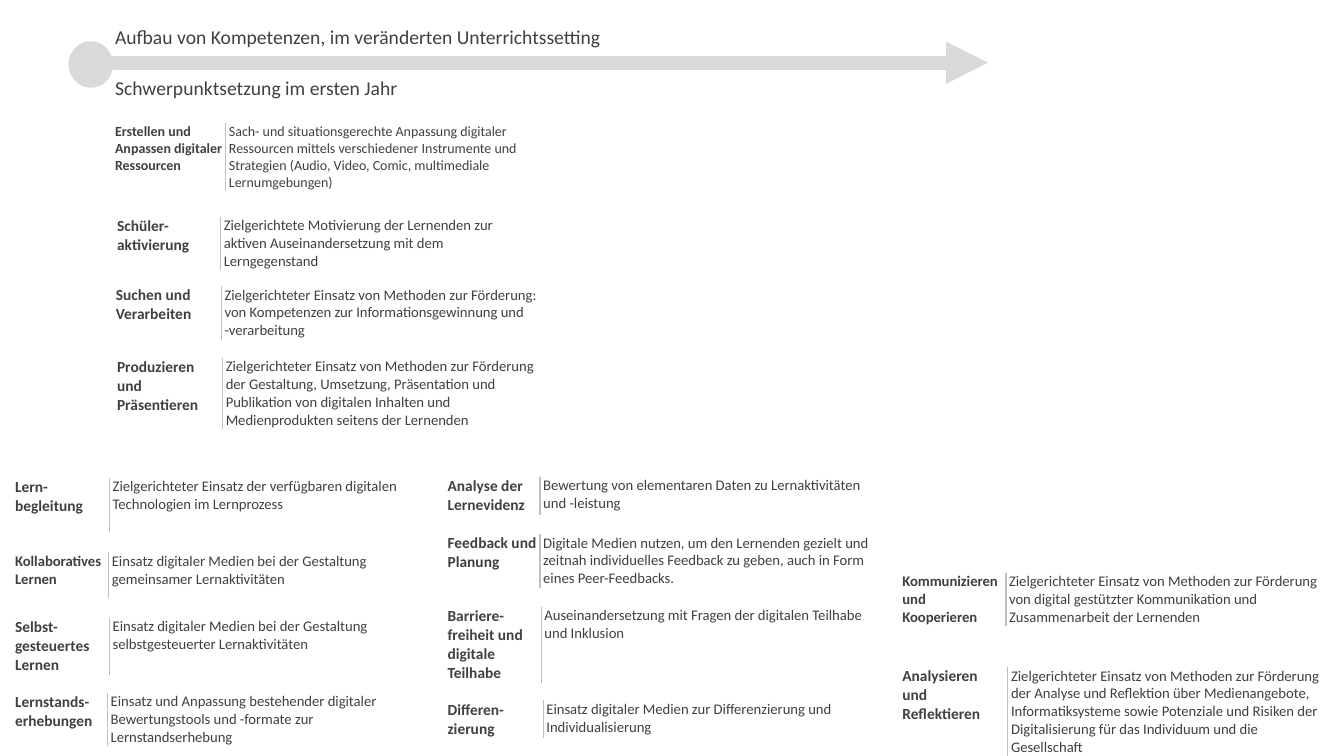
from lxml import etree
from pptx import Presentation
from pptx.dml.color import RGBColor
from pptx.enum.shapes import MSO_CONNECTOR, MSO_SHAPE
from pptx.enum.text import MSO_ANCHOR, PP_ALIGN
from pptx.oxml.ns import qn
from pptx.util import Cm, Pt

STRAIGHT = MSO_CONNECTOR.STRAIGHT
OVAL = MSO_SHAPE.OVAL
MIDDLE = MSO_ANCHOR.MIDDLE
LEFT = PP_ALIGN.LEFT

TITLE_ONLY = 5
FONT = "Calibri"
COLORS = {"text": "404040", "arrow": "D9D9D9", "rule": "BFBFBF"}
NO_TABLE_STYLE = "{2D5ABB26-0587-4C30-8999-92F81FD0307C}"
HEADING_FORMAT = {"word_wrap": True, "vertical_anchor": MIDDLE,
                  "margin_left": Cm(0.08), "margin_right": Cm(0.08),
                  "margin_top": Cm(0.08), "margin_bottom": Cm(0.08)}
CELL_FORMAT = {"margin_left": Cm(0.08), "margin_right": Cm(0.08),
               "margin_top": 0, "margin_bottom": 0}

# left, top, label width, description width, height (cm), label size, description size (pt)
COMPETENCES = [
    (2.82, 3.1, 2.87, 8.25, 1.7, 10, 10, "Erstellen und Anpassen digitaler Ressourcen",
     "Sach- und situationsgerechte Anpassung digitaler Ressourcen mittels verschiedener "
     "Instrumente und Strategien (Audio, Video, Comic, multimediale Lernumgebungen)"),
    (2.87, 5.46, 2.69, 8.05, 1.35, 11, 10.5, "Schüler-aktivierung",
     "Zielgerichtete Motivierung der Lernenden zur aktiven Auseinandersetzung mit dem "
     "Lerngegenstand"),
    (2.84, 7.21, 2.74, 8.41, 1.35, 11, 10.5, "Suchen und Verarbeiten",
     "Zielgerichteter Einsatz von Methoden zur Förderung: von Kompetenzen zur "
     "Informationsgewinnung und -verarbeitung"),
    (2.87, 9.02, 2.74, 8.43, 1.78, 11, 10.5, "Produzieren und Präsentieren",
     "Zielgerichteter Einsatz von Methoden zur Förderung der Gestaltung, Umsetzung, "
     "Präsentation und Publikation von digitalen Inhalten und Medienprodukten seitens "
     "der Lernenden"),
    (0.3, 12.04, 2.46, 8.2, 1.37, 11, 10.5, "Lern-begleitung",
     "Zielgerichteter Einsatz der verfügbaren digitalen Technologien im Lernprozess"),
    (0.3, 13.92, 2.44, 8.2, 1.14, 10.5, 10.5, "Kollaboratives Lernen",
     "Einsatz digitaler Medien bei der Gestaltung gemeinsamer Lernaktivitäten"),
    (0.3, 15.57, 2.46, 8.2, 1.4, 11, 10.5, "Selbst-gesteuertes Lernen",
     "Einsatz digitaler Medien bei der Gestaltung selbstgesteuerter Lernaktivitäten"),
    (0.3, 17.45, 2.41, 8.38, 1.35, 11, 10.5, "Lernstands-erhebungen",
     "Einsatz und Anpassung bestehender digitaler Bewertungstools und -formate zur "
     "Lernstandserhebung"),
    (11.2, 12.01, 2.41, 8.38, 0.97, 11, 10.5, "Analyse der Lernevidenz",
     "Bewertung von elementaren Daten zu Lernaktivitäten und -leistung"),
    (11.2, 13.46, 2.41, 8.38, 1.35, 11, 10.5, "Feedback und Planung",
     "Digitale Medien nutzen, um den Lernenden gezielt und zeitnah individuelles Feedback "
     "zu geben, auch in Form eines Peer-Feedbacks."),
    (11.2, 15.29, 2.44, 8.25, 1.85, 11, 10.5, "Barriere-freiheit und digitale Teilhabe",
     "Auseinandersetzung mit Fragen der digitalen Teilhabe und Inklusion"),
    (11.2, 17.65, 2.49, 8.18, 0.94, 11, 10.5, "Differen-zierung",
     "Einsatz digitaler Medien zur Differenzierung und Individualisierung"),
    (22.66, 14.43, 2.69, 8.25, 1.35, 10.5, 10.5, "Kommunizieren und Kooperieren",
     "Zielgerichteter Einsatz von Methoden zur Förderung von digital gestützter "
     "Kommunikation und Zusammenarbeit der Lernenden"),
    (22.66, 16.81, 2.74, 8.25, 2.24, 11, 10.5, "Analysieren und Reflektieren",
     "Zielgerichteter Einsatz von Methoden zur Förderung der Analyse und Reflektion über "
     "Medienangebote, Informatiksysteme sowie Potenziale und Risiken der Digitalisierung "
     "für das Individuum und die Gesellschaft"),
]


def rgb(name):
    return RGBColor.from_string(COLORS[name])


def apply_format(target, values):
    for name, value in values.items():
        setattr(target, name, value)


def write_text(text_frame, text, size, bold=False):
    paragraph = text_frame.paragraphs[0]
    paragraph.alignment = LEFT
    run = paragraph.add_run()
    run.text = text
    apply_format(run.font, {"name": FONT, "size": Pt(size), "bold": bold})
    run.font.color.rgb = rgb("text")


def format_heading(shape, text, top):
    apply_format(shape, {"left": Cm(2.82), "top": Cm(top),
                         "width": Cm(13.54), "height": Cm(0.74)})
    apply_format(shape.text_frame, HEADING_FORMAT)
    write_text(shape.text_frame, text, 14)


def add_cell_border(cell, side):
    properties = cell._tc.get_or_add_tcPr()
    line = etree.Element(qn(f"a:ln{side}"), w=str(Pt(1)))
    fill = etree.SubElement(line, qn("a:solidFill"))
    etree.SubElement(fill, qn("a:srgbClr"), val=COLORS["rule"])
    properties.insert(0, line)


def add_competence(slide, left, top, label_width, description_width, height,
                   label_size, description_size, label, description):
    """Add a one-row table with a bold label, a vertical rule and a description."""
    frame = slide.shapes.add_table(1, 2, Cm(left), Cm(top),
                                   Cm(label_width + description_width), Cm(height))
    table = frame.table
    apply_format(table, {"first_row": False, "horz_banding": False})
    table._tbl.tblPr.find(qn("a:tableStyleId")).text = NO_TABLE_STYLE
    columns = [(label_width, label, label_size, True, "R"),
               (description_width, description, description_size, False, "L")]
    for index, (width, text, size, bold, border_side) in enumerate(columns):
        table.columns[index].width = Cm(width)
        cell = table.cell(0, index)
        apply_format(cell, CELL_FORMAT)
        cell.fill.background()
        write_text(cell.text_frame, text, size, bold)
        add_cell_border(cell, border_side)


def add_timeline(slide):
    arrow = slide.shapes.add_connector(STRAIGHT, Cm(2.82), Cm(1.58), Cm(24.9), Cm(1.58))
    arrow.line.width = Pt(10)
    arrow.line.color.rgb = rgb("arrow")
    etree.SubElement(arrow.line._get_or_add_ln(), qn("a:tailEnd"), type="triangle")
    etree.SubElement(arrow._element.spPr, qn("a:effectLst"))

    start = slide.shapes.add_shape(OVAL, Cm(1.73), Cm(1.04), Cm(1.12), Cm(1.17))
    start.shadow.inherit = False
    start.fill.solid()
    start.fill.fore_color.rgb = rgb("arrow")
    start.line.fill.background()


def main():
    presentation = Presentation()
    presentation.slide_width = Cm(33.87)
    presentation.slide_height = Cm(19.05)
    slide = presentation.slides.add_slide(presentation.slide_layouts[TITLE_ONLY])

    for competence in COMPETENCES:
        add_competence(slide, *competence)
    add_timeline(slide)
    format_heading(slide.shapes.title,
                   "Aufbau von Kompetenzen, im veränderten Unterrichtssetting", 0.56)
    subtitle = slide.shapes.add_textbox(0, 0, 0, 0)
    format_heading(subtitle, "Schwerpunktsetzung im ersten Jahr", 1.85)

    presentation.save("out.pptx")


if __name__ == "__main__":
    main()
